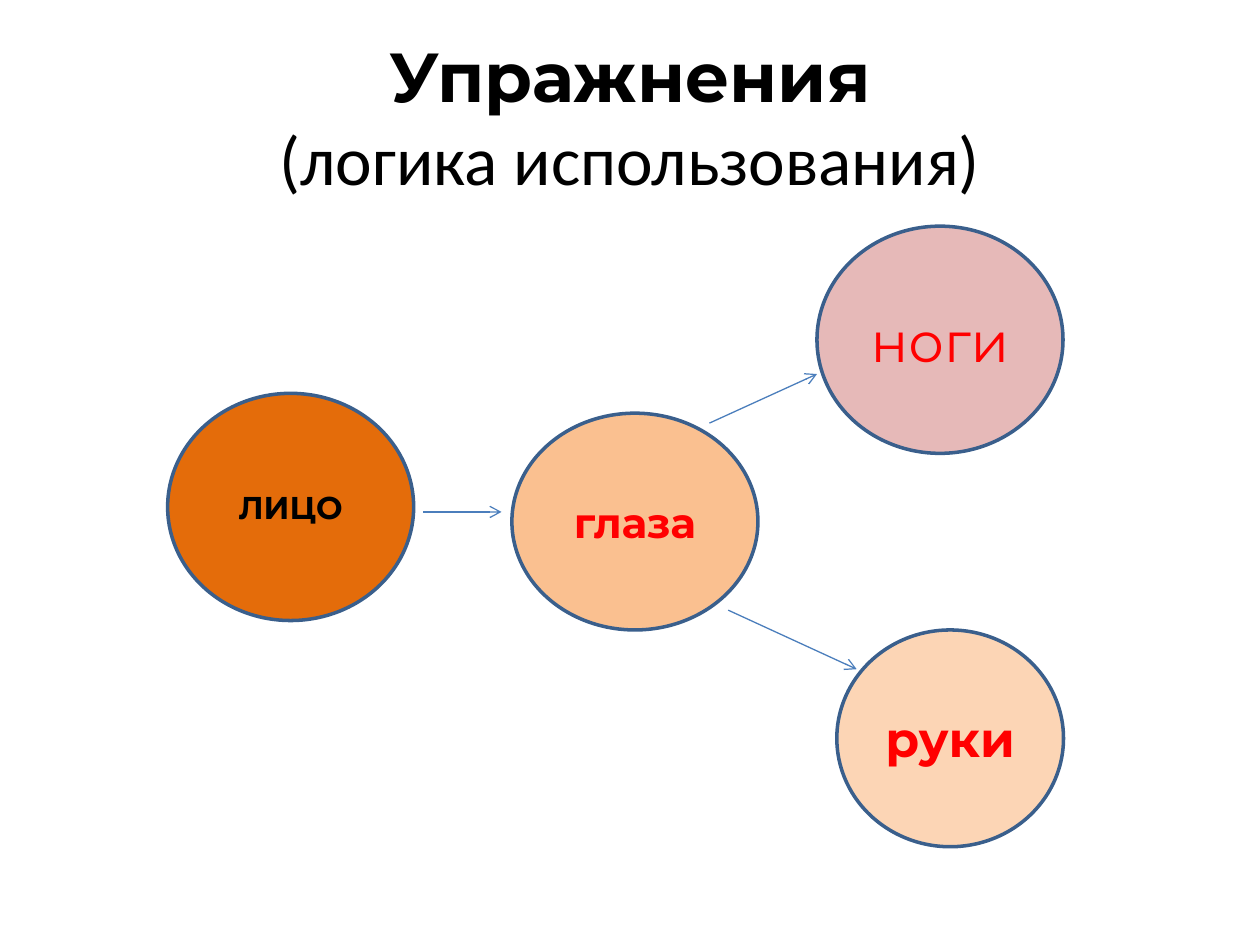
import pptx
import pptx.dml.color
import pptx.enum.shapes
import pptx.enum.text
import pptx.oxml
import pptx.oxml.ns
import pptx.util
from pptx.util import Cm


def color(hex_string):
    return pptx.dml.color.RGBColor.from_string(hex_string)


class DiagramSlide:
    """Holds the style and the current slide."""

    heading_font = "Montserrat"
    body_font = "Calibri"
    outline = "3A5F8C"
    arrow_color = "4B7EBC"

    def __init__(self, presentation):
        self.slide = presentation.slides.add_slide(presentation.slide_layouts[5])

    def title(self, heading, subheading, left, top, width, height):
        shape = self.slide.shapes.title
        shape.left, shape.top = Cm(left), Cm(top)
        shape.width, shape.height = Cm(width), Cm(height)
        frame = shape.text_frame
        frame.auto_size = pptx.enum.text.MSO_AUTO_SIZE.NONE
        frame.vertical_anchor = pptx.enum.text.MSO_ANCHOR.MIDDLE
        paragraph = frame.paragraphs[0]
        paragraph.alignment = pptx.enum.text.PP_ALIGN.CENTER
        for text, font_name, bold in ((heading, self.heading_font, True),
                                      (subheading, self.body_font, False)):
            if paragraph.runs:
                paragraph.add_line_break()
            run = paragraph.add_run()
            run.text = text
            run.font.name = font_name
            run.font.size = pptx.util.Pt(39.6)
            run.font.bold = bold
            run.font.color.rgb = color("000000")

    def circle(self, text, left, top, width, height, fill, size,
               text_color="FF0000", bold=True):
        shape = self.slide.shapes.add_shape(
            pptx.enum.shapes.MSO_SHAPE.OVAL,
            Cm(left), Cm(top), Cm(width), Cm(height))
        shape.shadow.inherit = False
        shape.fill.solid()
        shape.fill.fore_color.rgb = color(fill)
        shape.line.color.rgb = color(self.outline)
        shape.line.width = pptx.util.Pt(2)
        frame = shape.text_frame
        frame.text = text
        frame.word_wrap = True
        frame.vertical_anchor = pptx.enum.text.MSO_ANCHOR.MIDDLE
        paragraph = frame.paragraphs[0]
        paragraph.alignment = pptx.enum.text.PP_ALIGN.CENTER
        paragraph.font.name = self.heading_font
        paragraph.font.size = pptx.util.Pt(size)
        paragraph.font.bold = bold
        paragraph.font.color.rgb = color(text_color)

    def arrow(self, start_x, start_y, end_x, end_y):
        connector = self.slide.shapes.add_connector(
            pptx.enum.shapes.MSO_CONNECTOR.STRAIGHT,
            Cm(start_x), Cm(start_y), Cm(end_x), Cm(end_y))
        connector.line.color.rgb = color(self.arrow_color)
        connector.line.width = pptx.util.Pt(0.75)
        line = connector.line._get_or_add_ln()
        line.append(pptx.oxml.parse_xml(
            f'<a:tailEnd {pptx.oxml.ns.nsdecls("a")} type="arrow"/>'))
        connector._element.spPr.append(pptx.oxml.parse_xml(
            f'<a:effectLst {pptx.oxml.ns.nsdecls("a")}/>'))


def main():
    presentation = pptx.Presentation()
    presentation.slide_width = Cm(25.4)
    presentation.slide_height = Cm(19.05)
    diagram = DiagramSlide(presentation)

    # Title
    diagram.title("Упражнения", "(логика использования)", 1.27, 0.76, 22.86, 3.18)

    # Body parts
    diagram.circle("ЛИЦО", 3.38, 7.93, 4.96, 4.58, "E46C0A", 18, text_color="000000")
    diagram.circle("ноги", 16.47, 4.56, 4.96, 4.58, "E6B9B8", 32, bold=False)
    diagram.circle("руки", 16.87, 12.7, 4.57, 4.37, "FCD5B5", 28)
    diagram.circle("глаза", 10.32, 8.33, 4.96, 4.37, "FAC090", 24)

    # Order of use: face, eyes, then legs and hands
    diagram.arrow(8.53, 10.32, 10.11, 10.32)
    diagram.arrow(14.3, 8.53, 16.47, 7.54)
    diagram.arrow(14.68, 12.3, 17.27, 13.49)

    presentation.save("out.pptx")


if __name__ == "__main__":
    main()
